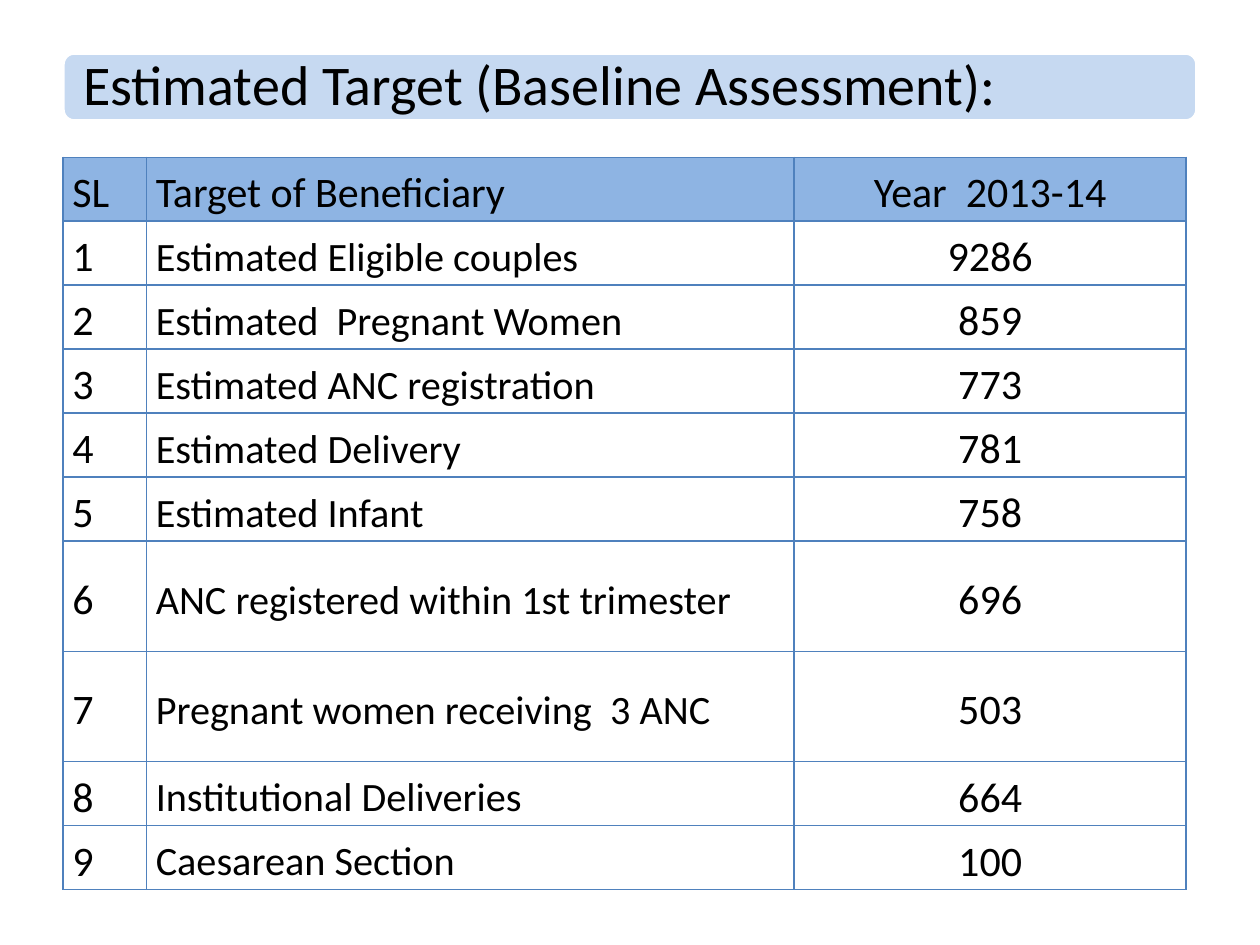
from lxml import etree
from pptx import Presentation
from pptx import util as u
from pptx.dml.color import RGBColor
from pptx.enum import shapes, text
from pptx.oxml import ns

# Content
TITLE = "Estimated Target (Baseline Assessment):"
HEADER = ("SL", "Target of Beneficiary", "Year  2013-14")
TARGETS = [
    ("Estimated Eligible couples", 9286),
    ("Estimated  Pregnant Women", 859),
    ("Estimated ANC registration", 773),
    ("Estimated Delivery", 781),
    ("Estimated Infant", 758),
    ("ANC registered within 1st trimester", 696),
    ("Pregnant women receiving  3 ANC", 503),
    ("Institutional Deliveries", 664),
    ("Caesarean Section", 100),
]
TALL_ROWS = (6, 7)

THEME = {
    "font": "Calibri", "text": "000000", "banner": "C6D9F1", "outline": "FFFFFF",
    "header": "8EB4E3", "border": "4F81BD",
    "title_size": 32, "cell_size": 24, "name_size": 23,
}

# Layout
LEFT = u.Cm(1.27)
COLUMNS = [u.Cm(width) for width in (1.68, 13.06, 7.9)]
ROW, TALL_ROW = u.Cm(1.29), u.Cm(2.22)
CELL_FORMAT = {
    "vertical_anchor": text.MSO_ANCHOR.MIDDLE,
    "margin_left": u.Cm(0.19), "margin_right": u.Cm(0.19),
    "margin_top": u.Cm(0.02), "margin_bottom": 0,
}
TITLE_FORMAT = {
    "vertical_anchor": text.MSO_ANCHOR.MIDDLE, "word_wrap": True,
    "margin_left": u.Cm(0.34), "margin_right": u.Cm(0.34),
    "margin_top": 0, "margin_bottom": 0,
}


def apply(target, values):
    for name, value in values.items():
        setattr(target, name, value)


def write(frame, words, size, align, spacing):
    para = frame.paragraphs[0]
    apply(para, {"alignment": align, "line_spacing": spacing})
    span = para.add_run()
    span.text = words
    apply(span.font, {"name": THEME["font"], "size": u.Pt(size), "bold": False})
    span.font.color.rgb = RGBColor.from_string(THEME["text"])


def add_borders(cell):
    properties = cell._tc.get_or_add_tcPr()
    for side in ("a:lnL", "a:lnR", "a:lnT", "a:lnB"):
        line = etree.SubElement(properties, ns.qn(side), w=str(u.Pt(1)))
        fill = etree.SubElement(line, ns.qn("a:solidFill"))
        etree.SubElement(fill, ns.qn("a:srgbClr"), val=THEME["border"])


def add_banner(page):
    box = page.shapes.add_shape(shapes.MSO_SHAPE.ROUNDED_RECTANGLE,
                                LEFT, u.Cm(1.07), u.Cm(22.86), u.Cm(1.37))
    box.shadow.inherit = False
    box.fill.solid()
    box.fill.fore_color.rgb = RGBColor.from_string(THEME["banner"])
    box.line.color.rgb = RGBColor.from_string(THEME["outline"])
    box.line.width = u.Pt(2)
    apply(box.text_frame, TITLE_FORMAT)
    write(box.text_frame, TITLE, THEME["title_size"], text.PP_ALIGN.LEFT, 0.9)


def add_targets(page):
    rows = [HEADER] + [(number, *target) for number, target in enumerate(TARGETS, 1)]
    heights = [TALL_ROW if i in TALL_ROWS else ROW for i in range(len(rows))]
    table = page.shapes.add_table(len(rows), len(COLUMNS), LEFT, u.Cm(3.17),
                                  sum(COLUMNS), sum(heights)).table
    apply(table, {"first_row": False, "horz_banding": False})
    for column, width in zip(table.columns, COLUMNS):
        column.width = width
    for i, (row, height) in enumerate(zip(rows, heights)):
        table.rows[i].height = height
        for j, value in enumerate(row):
            cell = table.cell(i, j)
            apply(cell, CELL_FORMAT)
            add_borders(cell)
            if i == 0:
                cell.fill.solid()
                cell.fill.fore_color.rgb = RGBColor.from_string(THEME["header"])
            else:
                cell.fill.background()
            size = THEME["name_size" if i and j == 1 else "cell_size"]
            align = text.PP_ALIGN.CENTER if j == 2 else text.PP_ALIGN.JUSTIFY
            write(cell.text_frame, str(value), size, align, 1.15)


def main():
    deck = Presentation()
    apply(deck, {"slide_width": u.Cm(25.4), "slide_height": u.Cm(19.05)})
    page = deck.slides.add_slide(deck.slide_layouts[6])
    add_banner(page)
    add_targets(page)
    deck.save("out.pptx")


if __name__ == "__main__":
    main()
